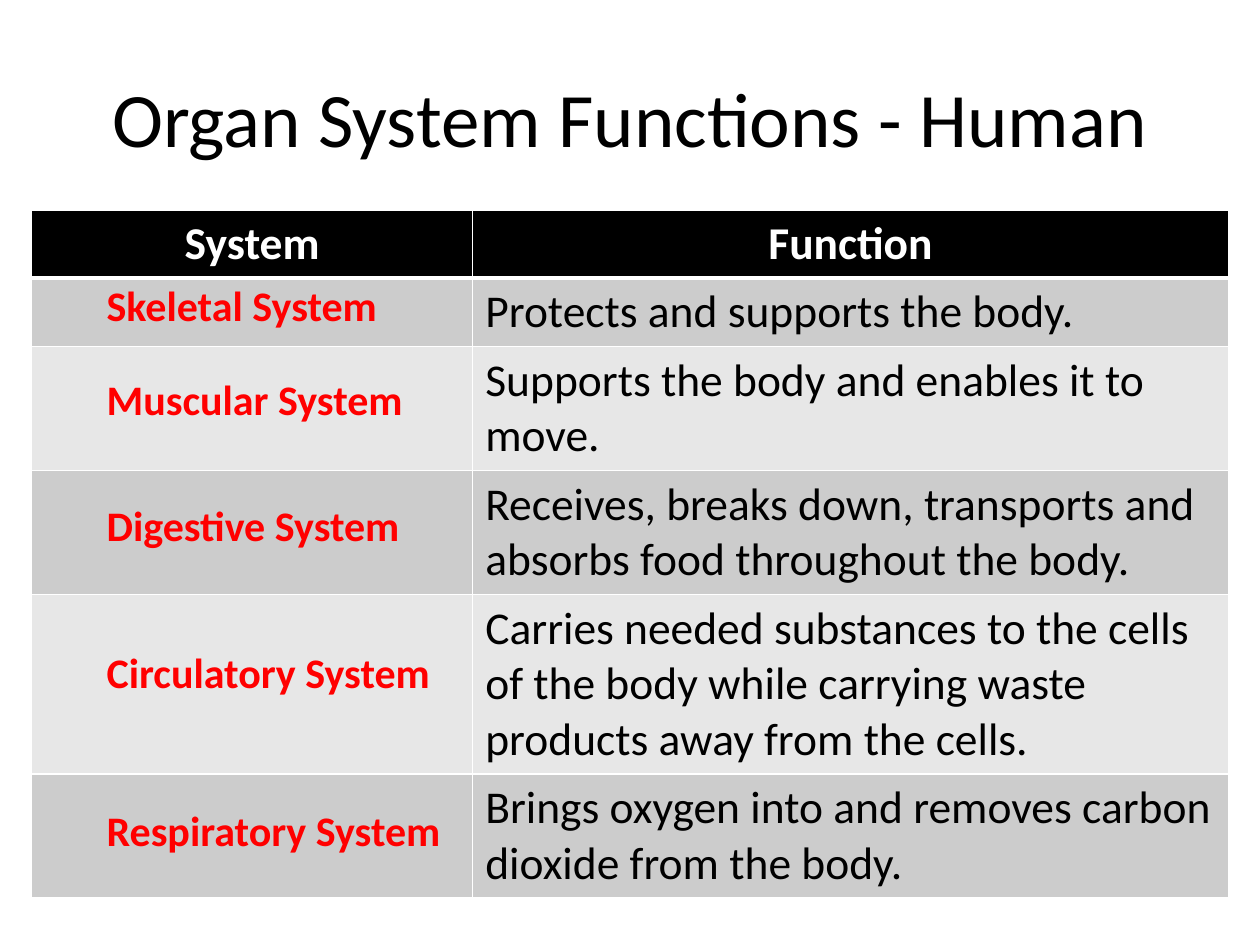
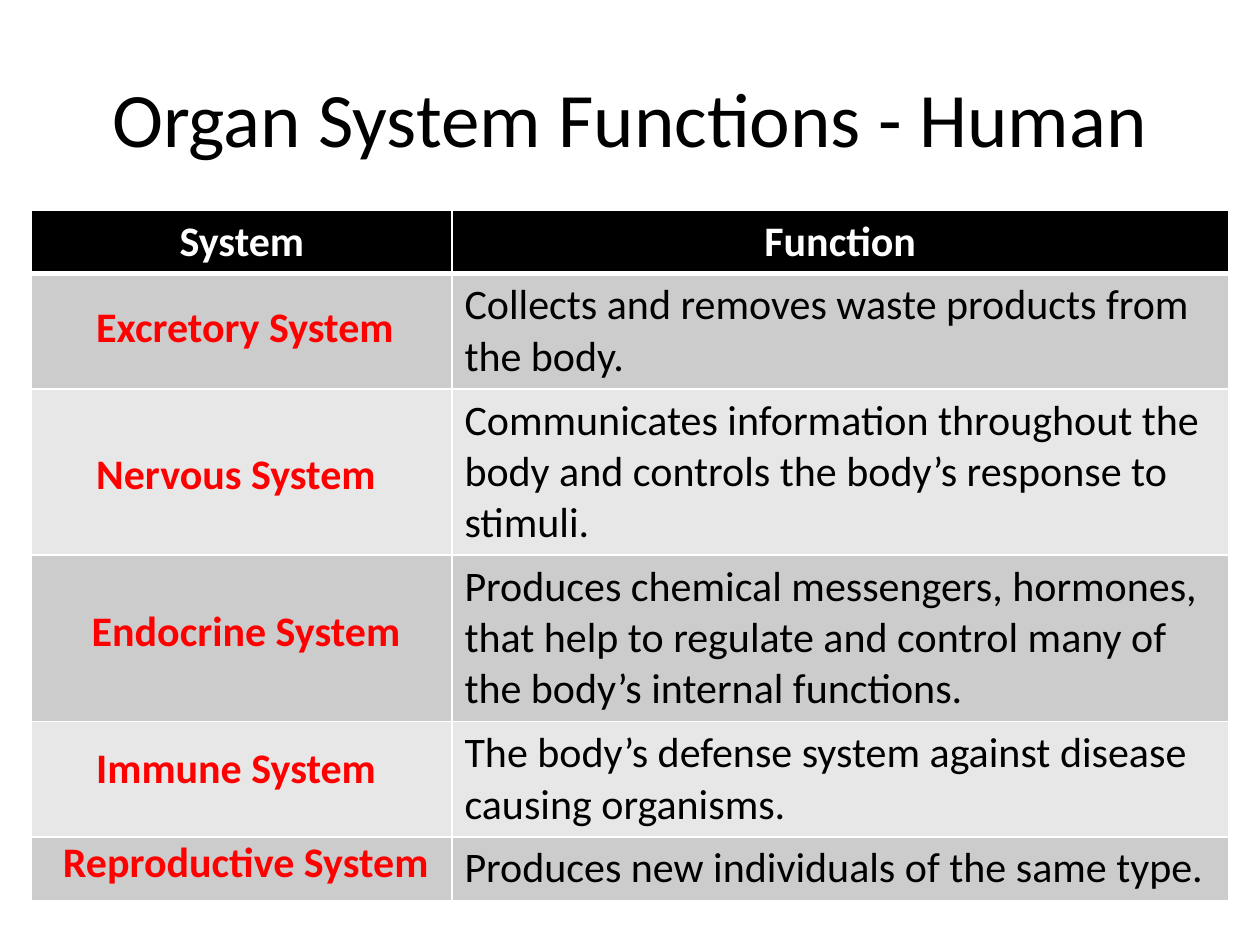
from dataclasses import dataclass

from lxml import etree
from pptx import Presentation
from pptx import util as u
from pptx.dml.color import RGBColor
from pptx.enum import text
from pptx.oxml import ns

FONT = "Calibri"
BLACK, WHITE, RED = "000000", "FFFFFF", "FF0000"
BANDS = ("CCCCCC", "E7E7E7")
TITLE = "Organ System Functions - Human"
HEADERS = ("System", "Function")
TABLE_LEFT, TABLE_TOP, TABLE_WIDTH = 0.64, 4.23, 24.13
ROW_HEIGHT, LABEL_HEIGHT = 1.04, 1.27


@dataclass
class OrganSystem:
    name: str
    function: str
    left: float
    top: float
    width: float


@dataclass
class SystemsTable:
    size: int
    name_width: float
    height: float
    systems: list[OrganSystem]


TABLES = [
    SystemsTable(26, 8.89, 13.64, [
        OrganSystem("Skeletal System", "Protects and supports the body.", 1.9, 5.5, 6.02),
        OrganSystem("Muscular System", "Supports the body and enables it to move.", 1.9, 7.41, 6.55),
        OrganSystem("Digestive System", "Receives, breaks down, transports and absorbs food "
                    "throughout the body.", 1.9, 9.95, 6.5),
        OrganSystem("Circulatory System", "Carries needed substances to the cells of the body while "
                    "carrying waste products away from the cells.", 1.9, 12.91, 7.09),
        OrganSystem("Respiratory System", "Brings oxygen into and removes carbon dioxide from the body.",
                    1.9, 16.09, 7.32),
    ]),
    SystemsTable(24, 8.47, 13.72, [
        OrganSystem("Excretory System", "Collects and removes waste products from the body.",
                    1.69, 5.93, 6.58),
        OrganSystem("Nervous System", "Communicates information throughout the body and controls "
                    "the body’s response to stimuli.", 1.69, 8.89, 6.2),
        OrganSystem("Endocrine System", "Produces chemical messengers, hormones, that help to regulate "
                    "and control many of the body’s internal functions.", 1.6, 12.06, 6.81),
        OrganSystem("Immune System", "The body’s defense system against disease causing organisms.",
                    1.69, 14.82, 6.22),
        OrganSystem("Reproductive System", "Produces new individuals of the same type.",
                    1.02, 16.72, 7.98),
    ]),
]


def rgb(color: str) -> RGBColor:
    return RGBColor.from_string(color)


def write(tf, words: str, size: int, color: str, bold: bool = False, align=text.PP_ALIGN.LEFT) -> None:
    tf.text = words
    p = tf.paragraphs[0]
    p.alignment = align
    for r in p.runs:
        r.font.name, r.font.size, r.font.bold = FONT, u.Pt(size), bold
        r.font.color.rgb = rgb(color)


def style_cell(cell, fill: str, top: float = 1, bottom: float = 1) -> None:
    tc_pr = cell._tc.get_or_add_tcPr()
    for side, width in (("L", 1), ("R", 1), ("T", top), ("B", bottom)):
        ln = etree.SubElement(tc_pr, ns.qn(f"a:ln{side}"), w=str(u.Pt(width)))
        solid = etree.SubElement(ln, ns.qn("a:solidFill"))
        etree.SubElement(solid, ns.qn("a:srgbClr"), val=WHITE)
    cell.fill.solid()
    cell.fill.fore_color.rgb = rgb(fill)


def add_systems_table(s, spec: SystemsTable) -> None:
    frame = s.shapes.add_table(len(spec.systems) + 1, 2, u.Cm(TABLE_LEFT), u.Cm(TABLE_TOP),
                               u.Cm(TABLE_WIDTH), u.Cm(spec.height))
    table = frame.table
    table.columns[0].width = u.Cm(spec.name_width)
    table.columns[1].width = u.Cm(TABLE_WIDTH - spec.name_width)
    for row in table.rows:
        row.height = u.Cm(ROW_HEIGHT)
    frame.height = u.Cm(spec.height)
    for col, header in enumerate(HEADERS):
        cell = table.cell(0, col)
        write(cell.text_frame, header, spec.size, WHITE, True, text.PP_ALIGN.CENTER)
        style_cell(cell, BLACK, bottom=3)
    for i, system in enumerate(spec.systems):
        for col in range(2):
            style_cell(table.cell(i + 1, col), BANDS[i % 2], top=1 if i else 3)
        write(table.cell(i + 1, 1).text_frame, system.function, spec.size, BLACK)


def add_label(s, system: OrganSystem) -> None:
    sp = s.shapes.add_textbox(u.Cm(system.left), u.Cm(system.top),
                              u.Cm(system.width), u.Cm(LABEL_HEIGHT))
    tf = sp.text_frame
    tf.word_wrap = False
    tf.auto_size = text.MSO_AUTO_SIZE.SHAPE_TO_FIT_TEXT
    write(tf, system.name, 24, RED, True)


def add_slide(prs, spec: SystemsTable) -> None:
    s = prs.slides.add_slide(prs.slide_layouts[5])
    title = s.shapes.title
    title.left, title.top = u.Cm(1.27), u.Cm(0.76)
    title.width, title.height = u.Cm(22.86), u.Cm(3.18)
    title.text_frame.vertical_anchor = text.MSO_ANCHOR.MIDDLE
    write(title.text_frame, TITLE, 44, BLACK, align=text.PP_ALIGN.CENTER)
    add_systems_table(s, spec)
    for system in spec.systems:
        add_label(s, system)


def main() -> None:
    prs = Presentation()
    prs.slide_width, prs.slide_height = u.Cm(25.4), u.Cm(19.05)
    for spec in TABLES:
        add_slide(prs, spec)
    prs.save("out.pptx")


if __name__ == "__main__":
    main()
